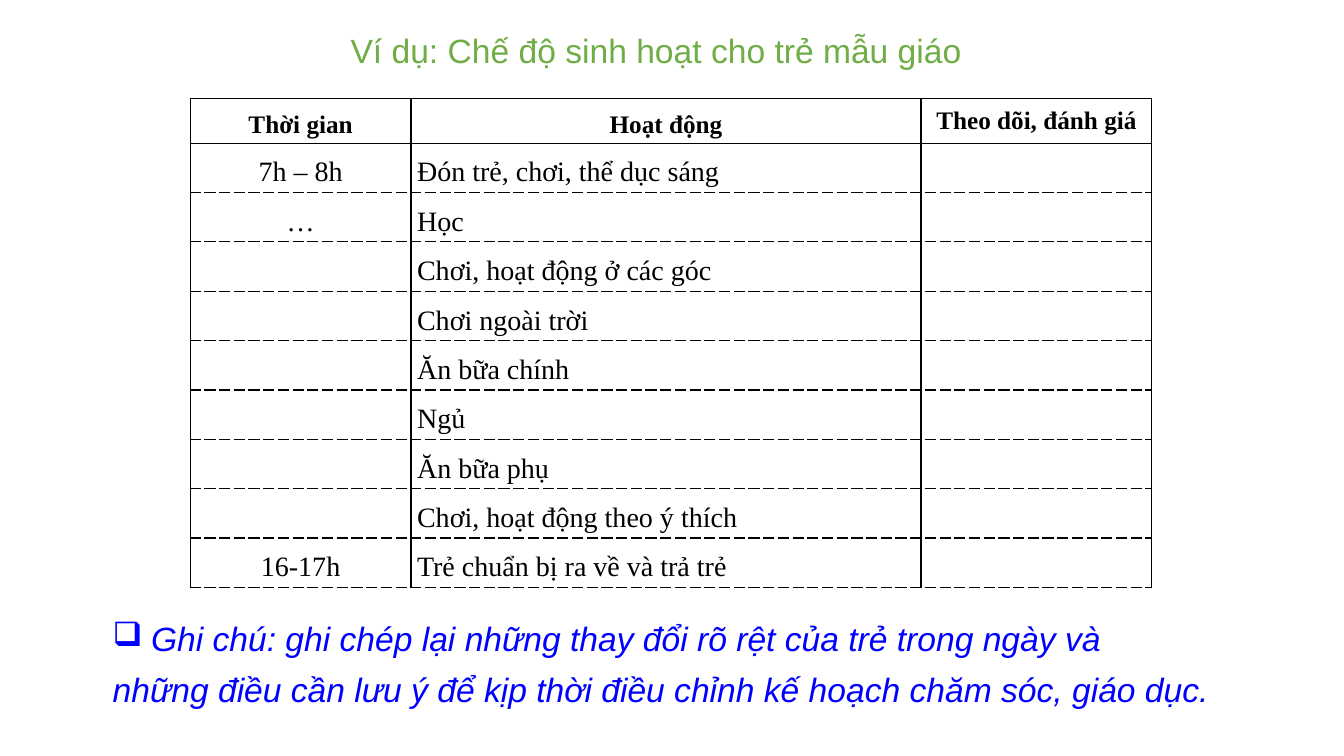
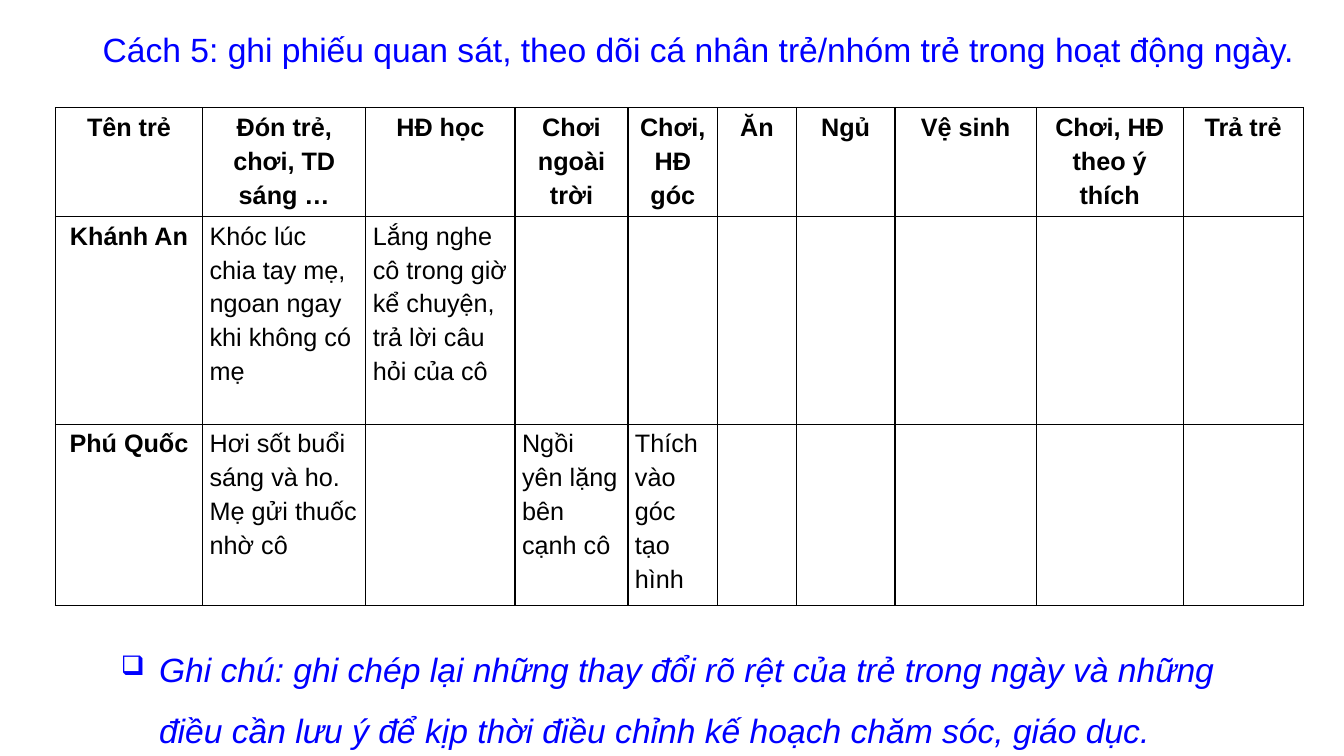
from dataclasses import dataclass

from lxml import etree
from pptx import Presentation
from pptx.dml.color import RGBColor
from pptx.enum.text import MSO_ANCHOR, PP_ALIGN
from pptx.oxml.ns import qn
from pptx.util import Emu, Inches, Pt

LEFT, CENTER, JUSTIFY = PP_ALIGN.LEFT, PP_ALIGN.CENTER, PP_ALIGN.JUSTIFY
TOP, MIDDLE = MSO_ANCHOR.TOP, MSO_ANCHOR.MIDDLE

COLORS = {"green": "70AD47", "blue": "0000FF", "black": "000000"}
SANS, SERIF = "Arial", "Times New Roman"
HEADING_SIZE = 24
NOTE_INDENT = Inches(0.38)

# The slide is a grid of 160 columns by 90 rows of square units
prs = Presentation()
prs.slide_width, prs.slide_height = Inches(13.33), Inches(7.5)
COL, ROW = prs.slide_width / 160, prs.slide_height / 90


@dataclass
class Box:
    x: float
    y: float
    w: float
    h: float

    def emu(self) -> list[Emu]:
        return [Emu(round(n * unit)) for n, unit in
                zip((self.x, self.y, self.w, self.h), (COL, ROW, COL, ROW))]


@dataclass
class Note:
    box: Box
    lines: list[str]
    align: PP_ALIGN
    spacing: float
    bullet_pct: int


@dataclass
class Grid:
    x: float
    y: float
    cols: list[float]
    rows: list[float]
    texts: list[list[str]]
    font: str
    head_size: int
    body_size: int
    body_align: PP_ALIGN
    anchor: MSO_ANCHOR
    spacing: float
    before: float
    after: float
    inset: float
    bold_first_col: bool = False
    dashed: bool = False
    top_cells: tuple = ()


def style_runs(p, font: str, size: float, color: str,
               bold: bool = False, italic: bool = False) -> None:
    for r in p.runs:
        r.font.name, r.font.size = font, Pt(size)
        r.font.bold, r.font.italic = bold, italic
        r.font.color.rgb = RGBColor.from_string(COLORS[color])


def add_text_frame(s, box: Box, anchor: MSO_ANCHOR):
    tf = s.shapes.add_textbox(*box.emu()).text_frame
    tf.word_wrap = True
    tf.vertical_anchor = anchor
    return tf


def add_title(s, box: Box, text: str, color: str) -> None:
    tf = add_text_frame(s, box, MIDDLE)
    tf.text = text
    tf.paragraphs[0].line_spacing = 0.9
    style_runs(tf.paragraphs[0], SANS, HEADING_SIZE, color)


def add_bullet(p, size_pct: int) -> None:
    pPr = p._p.get_or_add_pPr()
    pPr.set("marL", str(NOTE_INDENT))
    pPr.set("indent", str(-NOTE_INDENT))
    clr = etree.SubElement(pPr, qn("a:buClr"))
    etree.SubElement(clr, qn("a:srgbClr"), val=COLORS["blue"])
    etree.SubElement(pPr, qn("a:buSzPct"), val=str(size_pct * 1000))
    etree.SubElement(pPr, qn("a:buChar"), char="❑")


def add_note(s, note: Note) -> None:
    tf = add_text_frame(s, note.box, TOP)
    tf.text = "\n".join(note.lines)
    for p in tf.paragraphs:
        p.alignment, p.line_spacing = note.align, note.spacing
        p.space_before = Pt(10)
        style_runs(p, SANS, HEADING_SIZE, "blue", italic=True)
    add_bullet(tf.paragraphs[0], note.bullet_pct)


def set_borders(cell, dashed_sides: str) -> None:
    tcPr = cell._tc.get_or_add_tcPr()
    for i, side in enumerate("LRTB"):
        ln = etree.Element(qn(f"a:ln{side}"), w=str(Pt(1)))
        fill = etree.SubElement(ln, qn("a:solidFill"))
        etree.SubElement(fill, qn("a:srgbClr"), val=COLORS["black"])
        dash = "dash" if side in dashed_sides else "solid"
        etree.SubElement(ln, qn("a:prstDash"), val=dash)
        tcPr.insert(i, ln)


def add_grid(s, g: Grid) -> None:
    box = Box(g.x, g.y, sum(g.cols), sum(g.rows))
    table = s.shapes.add_table(len(g.rows), len(g.cols), *box.emu()).table
    table.first_row = table.horz_banding = False
    for column, width in zip(table.columns, g.cols):
        column.width = Emu(round(width * COL))
    for row, height in zip(table.rows, g.rows):
        row.height = Emu(round(height * ROW))

    for i, texts in enumerate(g.texts):
        for j, cell in enumerate(table.rows[i].cells):
            head = i == 0
            cell.fill.background()
            cell.margin_left = cell.margin_right = Inches(g.inset)
            cell.margin_top = cell.margin_bottom = 0
            cell.vertical_anchor = TOP if (i, j) in g.top_cells else g.anchor
            # Only lines between body rows, and the last one, are dashed
            dashed_sides = "" if head or not g.dashed else "B" if i == 1 else "TB"
            set_borders(cell, dashed_sides)
            if j < len(texts) and texts[j]:
                cell.text_frame.text = texts[j]
                p = cell.text_frame.paragraphs[0]
                p.alignment = CENTER if head or j == 0 else g.body_align
                p.line_spacing = g.spacing
                p.space_before, p.space_after = Pt(g.before), Pt(g.after)
                style_runs(p, g.font, g.head_size if head else g.body_size, "black",
                           bold=head or (j == 0 and g.bold_first_col))


def add_slide(title_box: Box, title: str, color: str, grid: Grid, note: Note) -> None:
    s = prs.slides.add_slide(prs.slide_layouts[6])
    add_title(s, title_box, title, color)
    add_grid(s, grid)
    add_note(s, note)


NOTE_START = "Ghi chú: ghi chép lại những thay đổi rõ rệt của trẻ trong ngày và"
NOTE_END = "những điều cần lưu ý để kịp thời điều chỉnh kế hoạch chăm sóc, giáo dục."

# Daily timetable
timetable = Grid(
    x=22.65, y=11.76, cols=[26.28, 60.72, 27.48], rows=[5.28] + [5.88] * 9,
    texts=[
        ["Thời gian", "Hoạt động", "Theo dõi, đánh giá"],
        ["7h – 8h", "Đón trẻ, chơi, thể dục sáng"],
        ["…", "Học"],
        ["", "Chơi, hoạt động ở các góc"],
        ["", "Chơi ngoài trời"],
        ["", "Ăn bữa chính"],
        ["", "Ngủ"],
        ["", "Ăn bữa phụ"],
        ["", "Chơi, hoạt động theo ý thích"],
        ["16-17h", "Trẻ chuẩn bị ra về và trả trẻ"],
    ],
    font=SERIF, head_size=18, body_size=20, body_align=JUSTIFY, anchor=MIDDLE,
    spacing=1.3, before=0, after=8, inset=0.06, dashed=True, top_cells=((0, 2),))

# Observation sheet for each child
observations = Grid(
    x=6.6, y=12.84,
    cols=[17.52, 19.44, 17.76, 13.44, 10.68, 9.36, 11.76, 16.8, 17.52, 14.28],
    rows=[12.36, 24.72, 18.48],
    texts=[
        ["Tên trẻ", "Đón trẻ, chơi, TD sáng …", "HĐ học", "Chơi ngoài trời",
         "Chơi, HĐ góc", "Ăn", "Ngủ", "Vệ sinh", "Chơi, HĐ theo ý thích", "Trả trẻ"],
        ["Khánh An", "Khóc lúc chia tay mẹ, ngoan ngay khi không có mẹ",
         "Lắng nghe cô trong giờ kể chuyện, trả lời câu hỏi của cô"],
        ["Phú Quốc", "Hơi sốt buổi sáng và ho. Mẹ gửi thuốc nhờ cô", "",
         "Ngồi yên lặng bên cạnh cô", "Thích vào góc tạo hình"],
    ],
    font=SANS, head_size=18, body_size=18, body_align=LEFT, anchor=TOP,
    spacing=1.2, before=2, after=2, inset=0.07, bold_first_col=True)

add_slide(Box(40.56, 2.16, 78.84, 8.16),
          "Ví dụ: Chế độ sinh hoạt cho trẻ mẫu giáo", "green", timetable,
          Note(Box(12.24, 73.56, 135.6, 14.64), [NOTE_START, NOTE_END],
               JUSTIFY, 0.9, 100))
add_slide(Box(11.04, 1.68, 144.48, 9),
          "Cách 5: ghi phiếu quan sát, theo dõi cá nhân trẻ/nhóm trẻ trong hoạt động ngày.",
          "blue", observations,
          Note(Box(13.2, 74.28, 140.04, 15), [f"{NOTE_START} {NOTE_END}"],
               LEFT, 1.5, 80))

prs.save("out.pptx")
